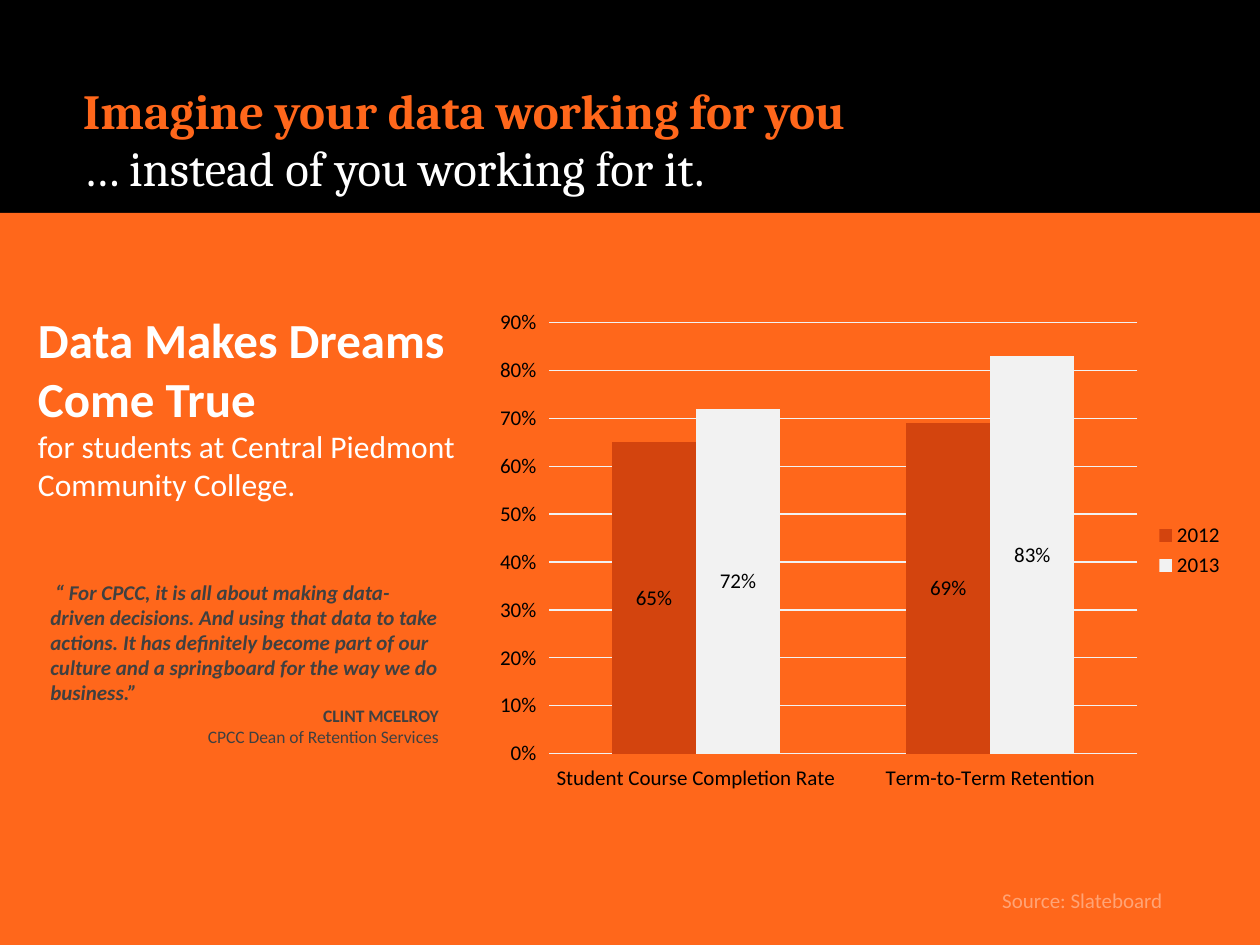
"""Build a slide pairing a student success quote with a retention chart."""
from dataclasses import dataclass, field

from lxml.etree import SubElement
from pptx import Presentation
from pptx.chart.data import CategoryChartData
from pptx.dml.color import RGBColor
from pptx.enum.chart import XL_CHART_TYPE as ChartType
from pptx.enum.chart import XL_LABEL_POSITION as LabelPosition
from pptx.enum.chart import XL_LEGEND_POSITION as LegendPosition
from pptx.enum.shapes import MSO_SHAPE as Shape
from pptx.enum.text import MSO_ANCHOR as Anchor
from pptx.enum.text import MSO_AUTO_SIZE as AutoSize
from pptx.enum.text import PP_ALIGN as Align
from pptx.oxml.ns import qn
from pptx.util import Emu, Pt


@dataclass(frozen=True)
class TextStyle:
    size: int
    color: str
    bold: bool = False
    italic: bool = False
    align: Align = Align.LEFT
    font: str = "Calibri"


@dataclass(frozen=True)
class Theme:
    black: str = "000000"
    orange: str = "FF671B"
    rust: str = "D3440E"
    pale: str = "F2F2F2"
    title: TextStyle = TextStyle(28, "FF671B", bold=True, font="Cambria")
    subtitle: TextStyle = TextStyle(28, "FFFFFF", font="Cambria")
    headline: TextStyle = TextStyle(28, "FFFFFF", bold=True)
    lead: TextStyle = TextStyle(18, "FFFFFF")
    quote: TextStyle = TextStyle(12, "404040", bold=True, italic=True)
    speaker: TextStyle = TextStyle(10, "404040", bold=True, align=Align.RIGHT)
    role: TextStyle = TextStyle(10, "404040", align=Align.RIGHT)
    source: TextStyle = TextStyle(12, "FFA476", align=Align.RIGHT)
    chart: TextStyle = TextStyle(12, "000000")


def px(*lengths):
    return [Emu(round(length * 914400 / 126)) for length in lengths]


def rgb(color):
    return RGBColor.from_string(color)


@dataclass
class SlideBuilder:
    page: object
    theme: Theme = field(default_factory=Theme)

    def set_font(self, font, style):
        font.name, font.size = style.font, Pt(style.size)
        font.bold, font.italic = style.bold, style.italic
        font.color.rgb = rgb(style.color)

    def fill_text(self, box, lines, margins=None, anchor=Anchor.TOP, spacing=None, wrap=True):
        frame = box.text_frame
        frame.word_wrap, frame.auto_size = wrap, AutoSize.NONE
        frame.vertical_anchor = anchor
        if margins:
            (frame.margin_left, frame.margin_top,
             frame.margin_right, frame.margin_bottom) = px(*margins)
        frame.text = "\n".join(text for text, style in lines)
        for para, (text, style) in zip(frame.paragraphs, lines):
            para.alignment = style.align
            para.space_before = Pt(0)
            if spacing:
                para.line_spacing = spacing
            for span in para.runs:
                self.set_font(span.font, style)

    def band(self, color, *bounds):
        band = self.page.shapes.add_shape(Shape.RECTANGLE, *px(*bounds))
        band.shadow.inherit = False
        band.fill.solid()
        band.fill.fore_color.rgb = rgb(color)
        band.line.fill.background()

    def placeholder(self, index, bounds, text, style, **layout):
        box = self.page.placeholders[index]
        box.left, box.top, box.width, box.height = px(*bounds)
        self.fill_text(box, [(text, style)], spacing=0.85, **layout)
        for para in box.text_frame.paragraphs:
            properties = para._p.get_or_add_pPr()
            properties.set("marL", "0")
            properties.set("indent", "0")
            SubElement(properties, qn("a:buNone"))

    def text(self, bounds, lines, **layout):
        self.fill_text(self.page.shapes.add_textbox(*px(*bounds)), lines, **layout)

    def column_chart(self, bounds, categories, series):
        data = CategoryChartData(number_format="0%")
        data.categories = categories
        for name, values, color in series:
            data.add_series(name, values)
        chart = self.page.shapes.add_chart(
            ChartType.COLUMN_CLUSTERED, *px(*bounds), data).chart
        self.set_font(chart.font, self.theme.chart)
        chart.has_title = False
        chart.has_legend = True
        chart.legend.position = LegendPosition.RIGHT
        chart.legend.include_in_layout = False
        for axis in (chart.category_axis, chart.value_axis):
            axis.format.line.fill.background()
        axis = chart.value_axis
        axis.minimum_scale, axis.maximum_scale, axis.major_unit = 0, 0.9, 0.1
        axis.tick_labels.number_format = "0%"
        axis.tick_labels.number_format_is_linked = False
        axis.major_gridlines.format.line.color.rgb = rgb(self.theme.pale)
        axis.major_gridlines.format.line.width = Pt(0.75)
        plot = chart.plots[0]
        plot.gap_width, plot.overlap, plot.vary_by_categories = 150, 0, False
        for bars, (name, values, color) in zip(plot.series, series):
            bars.format.fill.solid()
            bars.format.fill.fore_color.rgb = rgb(color)
            labels = bars.data_labels
            labels.show_value = True
            labels.number_format, labels.number_format_is_linked = "0%", False
            labels.position = LabelPosition.CENTER
            self.set_font(labels.font, self.theme.chart)


def main():
    deck = Presentation()
    deck.slide_width, deck.slide_height = px(1260, 945)
    slide = SlideBuilder(deck.slides.add_slide(deck.slide_layouts[1]))
    theme = slide.theme

    slide.band(theme.black, 0, 0, 1260, 213)
    slide.band(theme.orange, 0, 213, 1260, 732)
    for shape in list(slide.page.placeholders):
        slide.page.shapes._spTree.append(shape._element)

    slide.placeholder(0, (83, 89, 1091, 51), "Imagine your data working for you",
                      theme.title, margins=(0, 0, 0, 0), anchor=Anchor.BOTTOM)
    slide.placeholder(1, (83, 141, 954, 51), "… instead of you working for it.",
                      theme.subtitle, margins=(0, 6, 0, 0))
    slide.text((984, 881, 191, 38), [("Source: Slateboard", theme.source)], wrap=False)
    slide.text((38, 271, 437, 270), [
        ("Data Makes Dreams Come True", theme.headline),
        ("for students at Central Piedmont", theme.lead),
        ("Community College.", theme.lead),
    ], margins=(0, 0, 0, 0), anchor=Anchor.MIDDLE)
    slide.column_chart((485, 300, 752, 501),
                       ["Student Course Completion Rate", "Term-to-Term Retention"],
                       [("2012", (0.65, 0.69), theme.rust),
                        ("2013", (0.72, 0.83), theme.pale)])
    slide.text((38, 573, 417, 183), [
        (" “ For CPCC, it is all about making data-driven decisions. And using that "
         "data to take actions. It has definitely become part of our culture and a "
         "springboard for the way we do business.”", theme.quote),
        ("CLINT MCELROY ", theme.speaker),
        ("CPCC Dean of Retention Services ", theme.role),
    ])
    deck.save("out.pptx")


if __name__ == "__main__":
    main()
